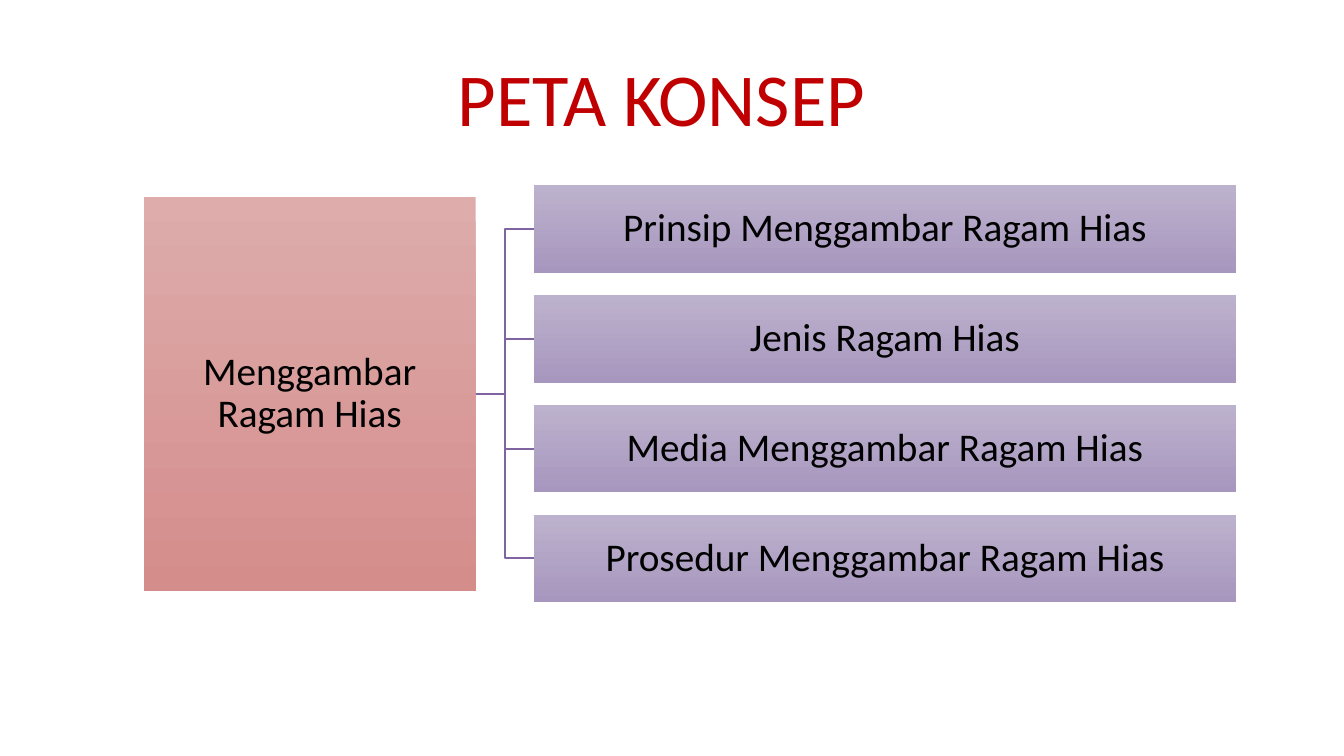
from lxml import etree
from pptx import Presentation
from pptx.dml.color import RGBColor
from pptx.enum.shapes import MSO_CONNECTOR, MSO_SHAPE
from pptx.enum.text import MSO_ANCHOR, MSO_AUTO_SIZE, PP_ALIGN
from pptx.oxml.ns import qn
from pptx.util import Inches, Pt

RECT, ELBOW = MSO_SHAPE.RECTANGLE, MSO_CONNECTOR.ELBOW
MIDDLE, CENTER = MSO_ANCHOR.MIDDLE, PP_ALIGN.CENTER
NO_FIT = MSO_AUTO_SIZE.NONE
LEFT, RIGHT = 1, 3  # connection sites of a rectangle

WHITE = RGBColor(0xFF, 0xFF, 0xFF)
BLACK = RGBColor(0x00, 0x00, 0x00)
RED = RGBColor(0xC0, 0x00, 0x00)
PURPLE = RGBColor(0x80, 0x64, 0xA2)
ROSE = (RGBColor(0xDD, 0xAC, 0xAB), RGBColor(0xD4, 0x8D, 0x8B))
LILAC = (RGBColor(0xBD, 0xB2, 0xCD), RGBColor(0xA7, 0x96, 0xBE))
FONT = "Calibri"

# Grid of the concept map, in inches
TOPICS = [
    "Prinsip Menggambar Ragam Hias",
    "Jenis Ragam Hias",
    "Media Menggambar Ragam Hias",
    "Prosedur Menggambar Ragam Hias",
]
ROOT_LEFT, ROOT_W, ROOT_H = 1.07, 2.47, 2.93
TOPIC_LEFT, TOPIC_W, TOPIC_H = 3.97, 5.23, 0.65
FIRST_ROW, LAST_ROW = 1.38, 3.83
ROW_STEP = (LAST_ROW - FIRST_ROW) / (len(TOPICS) - 1)
ROOT_TOP = (FIRST_ROW + LAST_ROW + TOPIC_H - ROOT_H) / 2

# Widescreen slide, 16:9
prs = Presentation()
prs.slide_width = Inches(10)
prs.slide_height = prs.slide_width * 9 // 16
s = prs.slides.add_slide(prs.slide_layouts[5])


def write(sp, text, size, color):
    tf = sp.text_frame
    tf.word_wrap = True
    tf.auto_size = NO_FIT
    tf.vertical_anchor = MIDDLE
    p = tf.paragraphs[0]
    p.text = text
    p.alignment = CENTER
    p.font.name, p.font.size, p.font.color.rgb = FONT, Pt(size), color


def add_box(text, left, top, width, height, colors, margin):
    sp = s.shapes.add_shape(RECT, Inches(left), Inches(top), Inches(width), Inches(height))
    sp.shadow.inherit = False
    sp.line.fill.background()
    sp.fill.gradient()
    sp.fill.gradient_angle = 270
    for stop, color, position in zip(sp.fill.gradient_stops, colors, (0, 1)):
        stop.color.rgb, stop.position = color, position
    write(sp, text, 21, BLACK)
    tf = sp.text_frame
    tf.margin_left = tf.margin_right = Inches(margin)
    tf.margin_top = tf.margin_bottom = Inches(0.01)
    tf.paragraphs[0].line_spacing = 0.9
    return sp


# Title
title = s.shapes.title
title.left, title.top = Inches(0.56), Inches(0.36)
title.width, title.height = Inches(8.85), Inches(0.72)
title.fill.solid()
title.fill.fore_color.rgb = WHITE
write(title, "PETA KONSEP ", 40, RED)

# Root of the map
root = add_box("Menggambar Ragam Hias", ROOT_LEFT, ROOT_TOP, ROOT_W, ROOT_H, ROSE, 0.1)

# Topics, each joined to the root
for row, text in enumerate(TOPICS):
    topic = add_box(text, TOPIC_LEFT, FIRST_ROW + row * ROW_STEP, TOPIC_W, TOPIC_H, LILAC, 0.01)
    link = s.shapes.add_connector(ELBOW, 0, 0, 0, 0)
    link.begin_connect(root, RIGHT)
    link.end_connect(topic, LEFT)
    link.line.color.rgb, link.line.width = PURPLE, Pt(1)
    etree.SubElement(link._element.spPr, qn("a:effectLst"))

prs.save("out.pptx")
